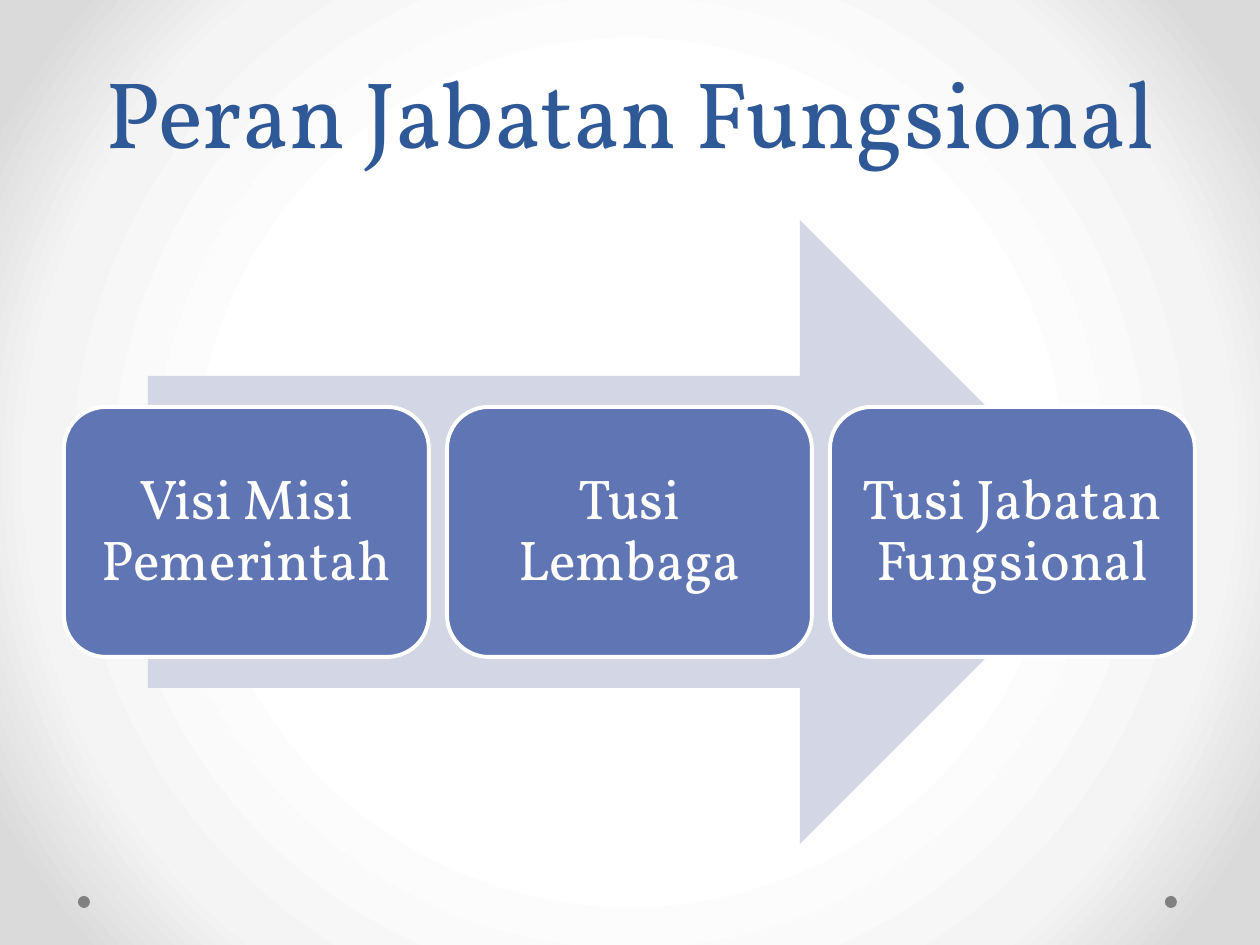
from dataclasses import dataclass

from pptx import Presentation, util as u
from pptx.dml.color import RGBColor
from pptx.enum import shapes, text
from pptx.oxml import parse_xml
from pptx.oxml.ns import nsdecls

PX = 914400 // 126


@dataclass(frozen=True)
class Theme:
    font: str = "Vollkorn"
    title: str = "2F5897"
    arrow: str = "D2D6E5"
    box: str = "6076B4"
    white: str = "FFFFFF"
    dot: str = "808080"
    glow: tuple = ((50, "FFFFFF"), (76, "F4F4F4"), (92, "DADADA"))
    title_size: int = 54
    box_size: int = 32


theme = Theme()


def add_shape(kind, left, top, width, height, fill):
    """Add a flat, unlined shape, measured in px."""
    shape = slide.shapes.add_shape(
        kind, *(n * PX for n in (left, top, width, height)))
    shape.shadow.inherit = False
    shape.fill.solid()
    shape.fill.fore_color.rgb = RGBColor.from_string(fill)
    shape.line.fill.background()
    return shape


def set_text(frame, words, size, color, space):
    frame.text = words
    frame.word_wrap = True
    frame.auto_size = text.MSO_AUTO_SIZE.NONE
    para = frame.paragraphs[0]
    para.alignment = text.PP_ALIGN.CENTER
    para.line_spacing = space
    para.font.name = theme.font
    para.font.size = u.Pt(size)
    para.font.color.rgb = RGBColor.from_string(color)


prs = Presentation()
prs.slide_width, prs.slide_height = u.Inches(10), u.Inches(7.5)
slide = prs.slides.add_slide(prs.slide_layouts[5])

# Radial background
stops = "".join(
    f'<a:gs pos="{pos * 1000}"><a:srgbClr val="{color}"/></a:gs>'
    for pos, color in theme.glow)
slide.element.cSld.insert(0, parse_xml(
    f'<p:bg {nsdecls("p", "a")}><p:bgPr><a:gradFill rotWithShape="1">'
    f'<a:gsLst>{stops}</a:gsLst><a:path path="circle">'
    '<a:fillToRect l="50000" t="50000" r="50000" b="50000"/></a:path>'
    '</a:gradFill><a:effectLst/></p:bgPr></p:bg>'))

# Corner dots
for left in (1165, 78):
    add_shape(shapes.MSO_SHAPE.OVAL, left, 896, 12, 12, theme.dot)

# Title
title = slide.shapes.title
title.left, title.top, title.width, title.height = (
    n * PX for n in (63, 39, 1134, 135))
set_text(title.text_frame, "Peran Jabatan Fungsional",
         theme.title_size, theme.title, u.Pt(58))
title.text_frame.vertical_anchor = text.MSO_ANCHOR.BOTTOM

# Arrow with the three steps
add_shape(shapes.MSO_SHAPE.RIGHT_ARROW, 148, 220, 964, 624, theme.arrow)
steps = ("Visi Misi Pemerintah", "Tusi Lembaga", "Tusi Jabatan Fungsional")
for i, step in enumerate(steps):
    box = add_shape(shapes.MSO_SHAPE.ROUNDED_RECTANGLE,
                    64 + 383 * i, 407, 365, 250, theme.box)
    box.line.color.rgb = RGBColor.from_string(theme.white)
    box.line.width = u.Pt(2.25)
    frame = box.text_frame
    frame.margin_left = frame.margin_right = 16 * PX
    frame.margin_top = frame.margin_bottom = 16 * PX
    frame.vertical_anchor = text.MSO_ANCHOR.MIDDLE
    set_text(frame, step, theme.box_size, theme.white, 0.9)

prs.save("out.pptx")
